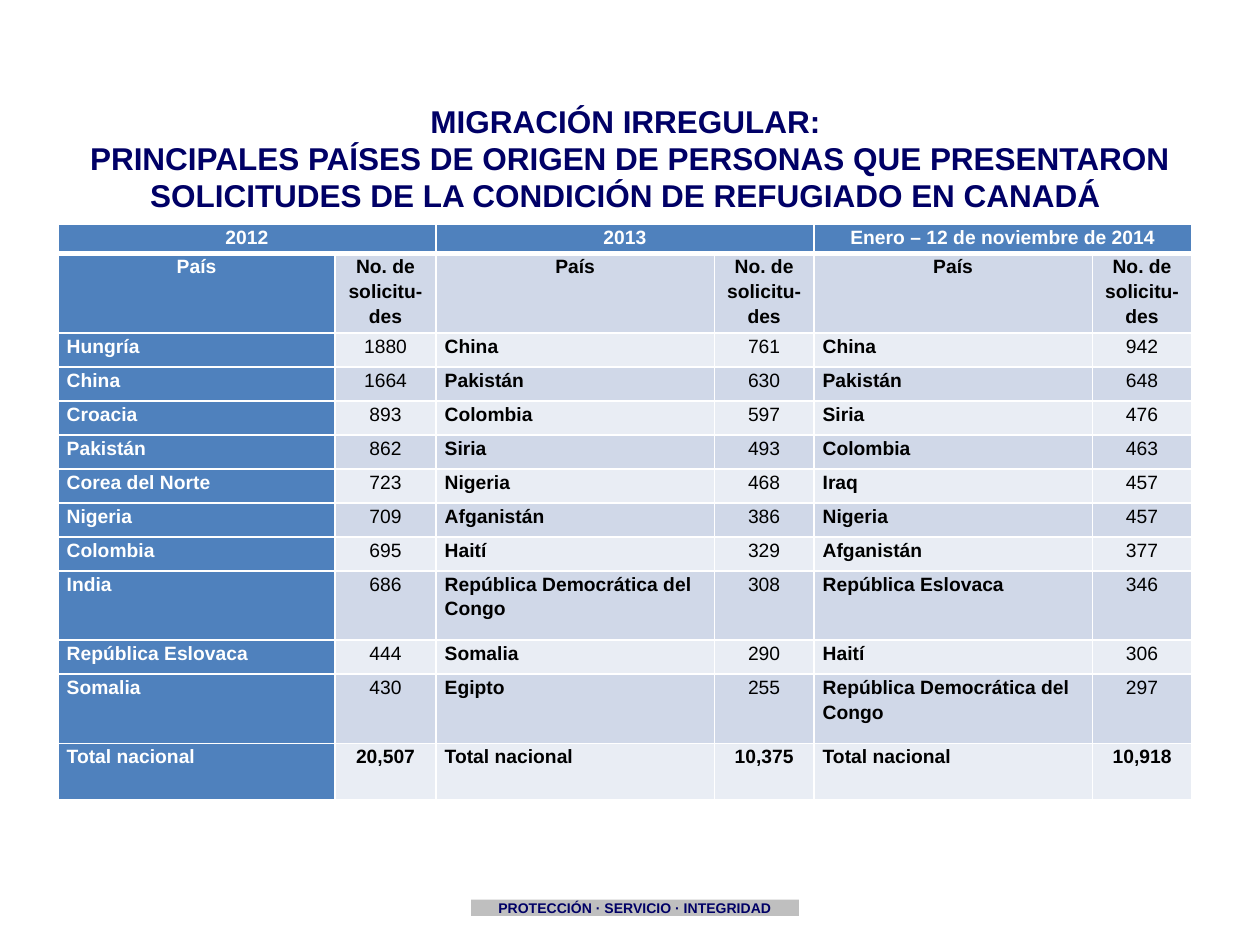
from dataclasses import dataclass
from typing import Any

from lxml import etree
from pptx import Presentation
from pptx.dml.color import RGBColor
from pptx.enum.shapes import MSO_SHAPE
from pptx.enum.text import MSO_ANCHOR, PP_ALIGN
from pptx.oxml.ns import qn
from pptx.util import Inches, Pt

RECTANGLE = MSO_SHAPE.RECTANGLE
LEFT, CENTER = PP_ALIGN.LEFT, PP_ALIGN.CENTER
TOP, MIDDLE = MSO_ANCHOR.TOP, MSO_ANCHOR.MIDDLE

COLORS = {
    "navy": "000066",
    "blue": "4F81BD",
    "dark_band": "D0D8E8",
    "light_band": "E9EDF4",
    "gray": "BFBFBF",
    "white": "FFFFFF",
    "black": "000000",
}

TITLE = [
    "MIGRACIÓN IRREGULAR: ",
    "PRINCIPALES PAÍSES DE ORIGEN DE PERSONAS QUE PRESENTARON "
    "SOLICITUDES DE LA CONDICIÓN DE REFUGIADO EN CANADÁ ",
]
PERIODS = ["2012", "2013", "Enero – 12 de noviembre de 2014"]
HEADINGS = ["País", "No. de solicitu-des"] * len(PERIODS)
COUNTRIES = [
    ["Hungría", "1880", "China", "761", "China", "942"],
    ["China", "1664", "Pakistán", "630", "Pakistán", "648"],
    ["Croacia", "893", "Colombia", "597", "Siria", "476"],
    ["Pakistán", "862", "Siria", "493", "Colombia", "463"],
    ["Corea del Norte", "723", "Nigeria", "468", "Iraq", "457"],
    ["Nigeria", "709", "Afganistán", "386", "Nigeria", "457"],
    ["Colombia", "695", "Haití", "329", "Afganistán", "377"],
    ["India", "686", "República Democrática del Congo", "308", "República Eslovaca", "346"],
    ["República Eslovaca", "444", "Somalia", "290", "Haití", "306"],
    ["Somalia", "430", "Egipto", "255", "República Democrática del Congo", "297"],
]
TOTALS = ["Total nacional", "20,507", "Total nacional", "10,375", "Total nacional", "10,918"]
COLUMN_WIDTHS = [2.2, 0.8, 2.21, 0.79, 2.21, 0.79]
ROW_HEIGHTS = [0.23, 0.58] + [0.27] * 7 + [0.55, 0.27, 0.55, 0.45]


@dataclass
class SlideBuilder:
    """Holds the text style and the current slide, and adds its elements."""

    slide: Any
    font_name: str = "Arial"

    def text(self, frame, lines, size, color, bold=True, align=CENTER, spacing=None):
        frame.word_wrap = True
        for index, line in enumerate(lines):
            paragraph = frame.paragraphs[0] if index == 0 else frame.add_paragraph()
            paragraph.alignment = align
            paragraph.line_spacing = spacing
            run = paragraph.add_run()
            run.text = line
            values = {"name": self.font_name, "size": Pt(size), "bold": bold}
            for name, value in values.items():
                setattr(run.font, name, value)
            run.font.color.rgb = RGBColor.from_string(COLORS[color])

    def title(self, lines, left, top, width, height):
        shape = self.slide.shapes.add_textbox(*map(Inches, (left, top, width, height)))
        shape.text_frame.vertical_anchor = TOP
        self.text(shape.text_frame, lines, 18, "navy", spacing=Pt(21.4))

    def banner(self, label, left, top, width, height):
        box = map(Inches, (left, top, width, height))
        shape = self.slide.shapes.add_shape(RECTANGLE, *box)
        shape.shadow.inherit = False
        shape.fill.solid()
        shape.fill.fore_color.rgb = RGBColor.from_string(COLORS["gray"])
        shape.line.fill.background()
        frame = shape.text_frame
        values = {"margin_top": 0, "margin_bottom": 0, "vertical_anchor": MIDDLE}
        for name, value in values.items():
            setattr(frame, name, value)
        self.text(frame, [label], 8, "navy")

    def borders(self, cell, top, bottom):
        properties = cell._tc.get_or_add_tcPr()
        widths = {"a:lnL": 1, "a:lnR": 1, "a:lnT": top, "a:lnB": bottom}
        for index, (tag, width) in enumerate(widths.items()):
            line = etree.Element(qn(tag), w=str(Pt(width)))
            fill = etree.SubElement(line, qn("a:solidFill"))
            etree.SubElement(fill, qn("a:srgbClr"), val=COLORS["white"])
            properties.insert(index, line)

    def cell(self, cell, label, fill, top=1, bottom=1, **style):
        margins = {"margin_left": 0.07, "margin_right": 0.07, "margin_top": 0, "margin_bottom": 0}
        for name, value in margins.items():
            setattr(cell, name, Inches(value))
        cell.fill.solid()
        cell.fill.fore_color.rgb = RGBColor.from_string(COLORS[fill])
        self.borders(cell, top, bottom)
        color = "white" if fill == "blue" else "black"
        self.text(cell.text_frame, [label], 11, color, spacing=1.15, **style)

    def table(self, left, top):
        size = len(ROW_HEIGHTS), len(COLUMN_WIDTHS)
        box = map(Inches, (left, top, sum(COLUMN_WIDTHS), sum(ROW_HEIGHTS)))
        table = self.slide.shapes.add_table(*size, *box).table
        for column, width in zip(table.columns, COLUMN_WIDTHS):
            column.width = Inches(width)
        for row, height in zip(table.rows, ROW_HEIGHTS):
            row.height = Inches(height)
        for column in range(size[1]):
            label = "" if column % 2 else PERIODS[column // 2]
            self.cell(table.cell(0, column), label, "blue", bottom=3)
        for column in range(0, size[1], 2):
            table.cell(0, column).merge(table.cell(0, column + 1))
        for row, values in enumerate([HEADINGS, *COUNTRIES, TOTALS], start=1):
            band = "dark_band" if row % 2 else "light_band"
            for column, label in enumerate(values):
                is_count = column % 2 == 1
                self.cell(
                    table.cell(row, column),
                    label,
                    band if column else "blue",
                    top=3 if row == 1 else 1,
                    bold=not (is_count and values in COUNTRIES),
                    align=CENTER if is_count or row == 1 else LEFT,
                )


def main():
    presentation = Presentation()
    presentation.slide_width = Inches(10)
    presentation.slide_height = Inches(7.5)
    builder = SlideBuilder(presentation.slides.add_slide(presentation.slide_layouts[6]))
    builder.title(TITLE, 0.5, 0.76, 9, 0.95)
    builder.table(0.46, 1.78)
    builder.banner("PROTECCIÓN · SERVICIO · INTEGRIDAD", 3.74, 7.14, 2.6, 0.13)
    presentation.save("out.pptx")


if __name__ == "__main__":
    main()
